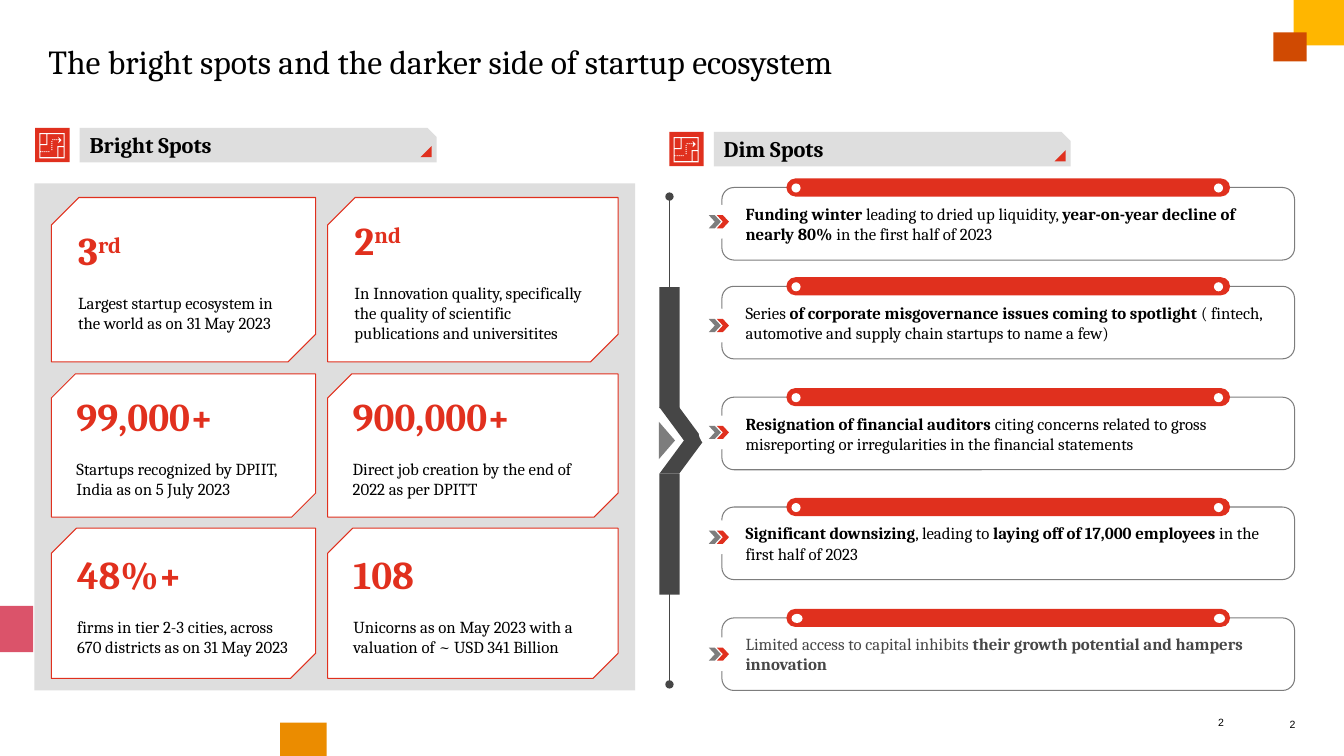
"""Build the slide on bright and dim spots of the startup ecosystem."""
from dataclasses import dataclass
from typing import NamedTuple

from lxml import etree
from pptx import Presentation
from pptx import util as u
from pptx.dml.color import RGBColor
from pptx.enum import shapes, text
from pptx.oxml import ns
from pptx.shapes import autoshape as auto

KIND = shapes.MSO_SHAPE
LEFT, RIGHT = text.PP_ALIGN.LEFT, text.PP_ALIGN.RIGHT
MID, LOW, TOP = text.MSO_ANCHOR.MIDDLE, text.MSO_ANCHOR.BOTTOM, text.MSO_ANCHOR.TOP


@dataclass(frozen=True)
class Theme:
    red: str = "E0301E"
    figure: str = "E1301E"
    dark: str = "464646"
    soft: str = "474747"
    grey: str = "7D7D7D"
    pale: str = "DEDEDE"
    white: str = "FFFFFF"
    black: str = "000000"
    gold: str = "FFB600"
    rust: str = "D04A02"
    rose: str = "DB536A"
    amber: str = "EB8C00"
    serif: str = "Cambria"
    sans: str = "Arial"
    title: float = 24
    head: float = 16
    big: float = 28
    body: float = 12
    page: float = 7.5
    rule: float = 0.75


class Box(NamedTuple):
    x: float
    y: float
    w: float
    h: float


class Card(NamedTuple):
    box: Box
    num: str
    note: str


class Risk(NamedTuple):
    top: float
    mark: float
    words: str
    color: str = "000000"
    gap: float = 0
    dot: float = 0.09


class Tag(NamedTuple):
    x: float
    y: float
    words: str


T = Theme()
DECOR = [(Box(12.83, 0, 0.5, 0.45), T.gold), (Box(12.63, 0.32, 0.33, 0.29), T.rust),
         (Box(0, 6.01, 0.33, 0.46), T.rose), (Box(2.78, 7.17, 0.46, 0.33), T.amber)]
COLS = [(0.51, 2.62), (3.25, 2.88)]
ROWS = [(1.96, 1.63), (3.71, 1.42), (5.24, 1.49)]
FACTS = [
    ("3^rd", "Largest startup ecosystem in the world as on 31 May 2023"),
    ("2^nd", "In Innovation quality, specifically the quality of scientific "
             "publications and universitites"),
    ("99,000+", "Startups recognized by DPIIT, India as on 5 July 2023"),
    ("900,000+", "Direct job creation by the end of 2022 as per DPITT"),
    ("48%+", "firms in tier 2-3 cities, across 670 districts as on 31 May 2023"),
    ("108", "Unicorns as on May 2023 with a valuation of ~ USD 341 Billion"),
]
CELLS = [Box(x, y, w, h) for y, h in ROWS for x, w in COLS]
CARDS = [Card(cell, *fact) for cell, fact in zip(CELLS, FACTS)]
RISKS = [
    Risk(1.86, 2.03, "*Funding winter *leading to dried up liquidity, *year-on-year "
         "decline of nearly 80%* in the first half of 2023"),
    Risk(2.84, 3.06, "Series *of corporate misgovernance issues coming to spotlight *"
         "( fintech, automotive and supply chain startups to name a few)"),
    Risk(3.94, 4.12, "*Resignation of financial auditors *citing concerns related to gross "
         "misreporting or irregularities in the financial statements"),
    Risk(5.03, 5.16, "*Significant downsizing*, leading to *laying off of 17,000 employees*"
         " in the first half of 2023", gap=6),
    Risk(6.13, 6.32, "Limited access to capital inhibits *their growth potential and "
         "hampers innovation", T.soft, 6, 0.11),
]
TAGS = [Tag(0.35, 1.27, "Bright Spots"), Tag(6.64, 1.31, "Dim Spots")]


def rect(l: int, t: int, r: int, b: int) -> list[tuple[int, int]]:
    return [(l, t), (l, b), (r, b), (r, t)]


DOTS = [(3, 18), (5, 18), (7, 18), (9, 18), (17, 6), (12, 10), (12, 8), (13, 6),
        (15, 6), (12, 14), (12, 12), (12, 16)]
MAZE = [
    rect(0, 0, 25, 25), rect(1, 1, 7, 11), rect(19, 14, 24, 24),
    [(1, 19), (2, 19), (2, 18), (1, 18), (1, 12), (8, 12), (8, 1), (24, 1),
     (24, 13), (18, 13), (18, 24), (1, 24)],
    [(19, 10), (22, 7), (19, 4), (19, 5), (20, 6), (19, 6), (19, 7), (20, 7), (19, 9)],
    *[rect(x, y, x + 1, y + 1) for x, y in DOTS],
]

deck = Presentation()
deck.slide_width, deck.slide_height = u.Inches(13.33), u.Inches(7.5)
tree = deck.slides.add_slide(deck.slide_layouts[6]).shapes


def paint(item: auto.Shape, fill: str | None, line: str | None = None) -> None:
    item.shadow.inherit = False
    if fill:
        item.fill.solid()
        item.fill.fore_color.rgb = RGBColor.from_string(fill)
    else:
        item.fill.background()
    if line:
        item.line.color.rgb = RGBColor.from_string(line)
        item.line.width = u.Pt(T.rule)
    else:
        item.line.fill.background()


def put(kind: KIND, box: Box, fill: str | None, line: str | None = None,
        adj: tuple[float, ...] = (), turn: float = 0) -> auto.Shape:
    item = tree.add_shape(kind, *map(u.Inches, box))
    paint(item, fill, line)
    for i, val in enumerate(adj):
        item.adjustments[i] = val
    item.rotation = turn
    return item


def frame(item: auto.Shape, pads: tuple[float, ...] = (0, 0, 0, 0),
          anchor: text.MSO_ANCHOR = MID) -> text.MSO_ANCHOR:
    body = item.text_frame
    body.word_wrap = True
    body.vertical_anchor = anchor
    body.margin_left, body.margin_top, body.margin_right, body.margin_bottom = map(u.Inches, pads)
    return body


def style(para, size: float, color: str, bold: bool = False,
          face: str = T.serif, align: text.PP_ALIGN = LEFT) -> None:
    para.alignment = align
    for run in para.runs:
        run.font.size, run.font.name, run.font.bold = u.Pt(size), face, bold
        run.font.color.rgb = RGBColor.from_string(color)


def label(box: Box, words: str, size: float, face: str, align: text.PP_ALIGN,
          anchor: text.MSO_ANCHOR) -> None:
    body = frame(tree.add_textbox(*map(u.Inches, box)), anchor=anchor)
    body.text = words
    style(body.paragraphs[0], size, T.black, False, face, align)
    if size == T.title:
        body.paragraphs[0].line_spacing = 0.85


def card(c: Card) -> None:
    item = put(KIND.SNIP_2_DIAG_RECTANGLE, c.box, T.white, T.red, (0.167, 0))
    body = frame(item, (0.13, 0.07, 0.13, 0.07))
    base, _, sup = c.num.partition("^")
    body.text = base
    num, note = body.paragraphs[0], body.add_paragraph()
    if sup:
        run = num.add_run()
        run.text = sup
        run.font._element.set("baseline", "30000")
    style(num, T.big, T.figure, True)
    note.text = c.note
    note.space_before = u.Pt(14)
    style(note, T.body, T.black)


def risk(r: Risk) -> None:
    item = put(KIND.ROUNDED_RECTANGLE, Box(7.16, r.top, 5.68, 0.72), None, T.grey, (0.167,))
    para = frame(item, (0.2, 0.07, 0.07, 0.07)).paragraphs[0]
    parts = [(part, i % 2 == 1) for i, part in enumerate(r.words.split("*")) if part]
    for part, _ in parts:
        para.add_run().text = part
    style(para, T.body, r.color)
    for run, (_, bold) in zip(para.runs, parts):
        run.font.bold = bold
    para.space_before = para.space_after = u.Pt(r.gap)
    put(KIND.OVAL, Box(6.93, r.mark, 0.4, 0.34), T.white)
    for x, color in ((7.11, T.red), (7.03, T.grey)):
        put(KIND.CHEVRON, Box(x, r.mark + 0.105, 0.12, 0.13), color, adj=(0.5,))
    put(KIND.ROUNDED_RECTANGLE, Box(7.8, r.top - 0.09, 4.4, 0.18), T.red, adj=(0.5,))
    for x in (7.85, 12.04):
        put(KIND.OVAL, Box(x, r.top - 0.04, r.dot, 0.09), T.white)


def tag(t: Tag) -> None:
    put(KIND.RECTANGLE, Box(t.x, t.y, 0.34, 0.34), T.red)
    bar = put(KIND.SNIP_1_RECTANGLE, Box(t.x + 0.44, t.y, 3.54, 0.34), T.pale, adj=(0.263,))
    body = frame(bar, (0.1, 0.05, 0.1, 0.1))
    body.text = t.words
    style(body.paragraphs[0], T.head, T.black, True)
    put(KIND.RIGHT_TRIANGLE, Box(t.x + 3.82, t.y + 0.18, 0.11, 0.11), T.red, turn=270)
    pen = tree.build_freeform(0, 0, scale=u.Inches(0.01))
    for ring in MAZE:
        pen.move_to(*ring[0])
        pen.add_line_segments(ring[1:], close=True)
    paint(pen.convert_to_shape(u.Inches(t.x + 0.04), u.Inches(t.y + 0.05)), T.white)


def spine() -> None:
    ends = map(u.Inches, (6.64, 6.79, 6.64, 1.95))
    rod = tree.add_connector(shapes.MSO_CONNECTOR.STRAIGHT, *ends)
    rod.line.color.rgb = RGBColor.from_string(T.dark)
    rod.line.width = u.Pt(T.rule)
    for end in ("a:headEnd", "a:tailEnd"):
        etree.SubElement(rod.line._get_or_add_ln(), ns.qn(end), type="oval")
    etree.SubElement(rod._element.spPr, ns.qn("a:effectLst"))
    put(KIND.RECTANGLE, Box(6.48, 3.83, 0.31, 1.09), T.white)
    put(KIND.CHEVRON, Box(6.54, 4.04, 0.44, 0.66), T.dark, adj=(0.554,))
    for y in (2.85, 4.7):
        put(KIND.RECTANGLE, Box(6.54, y, 0.2, 1.2), T.dark)
    put(KIND.ISOSCELES_TRIANGLE, Box(6.43, 4.29, 0.37, 0.16), T.grey, turn=90)


def main() -> None:
    for box, color in DECOR:
        put(KIND.RECTANGLE, box, color)
    label(Box(0.48, 0.47, 12.36, 0.54), "The bright spots and the darker side of startup ecosystem",
          T.title, T.serif, LEFT, TOP)
    put(KIND.RECTANGLE, Box(0.34, 1.82, 5.96, 5.03), T.pale)
    for c in CARDS:
        card(c)
    for x, y in ((8.99, 7.1), (8.28, 7.08)):
        label(Box(x, y, 3.86, 0.15), "2", T.page, T.sans, RIGHT, LOW)
    spine()
    for r in RISKS:
        risk(r)
    for t in TAGS:
        tag(t)
    deck.save("out.pptx")


if __name__ == "__main__":
    main()
